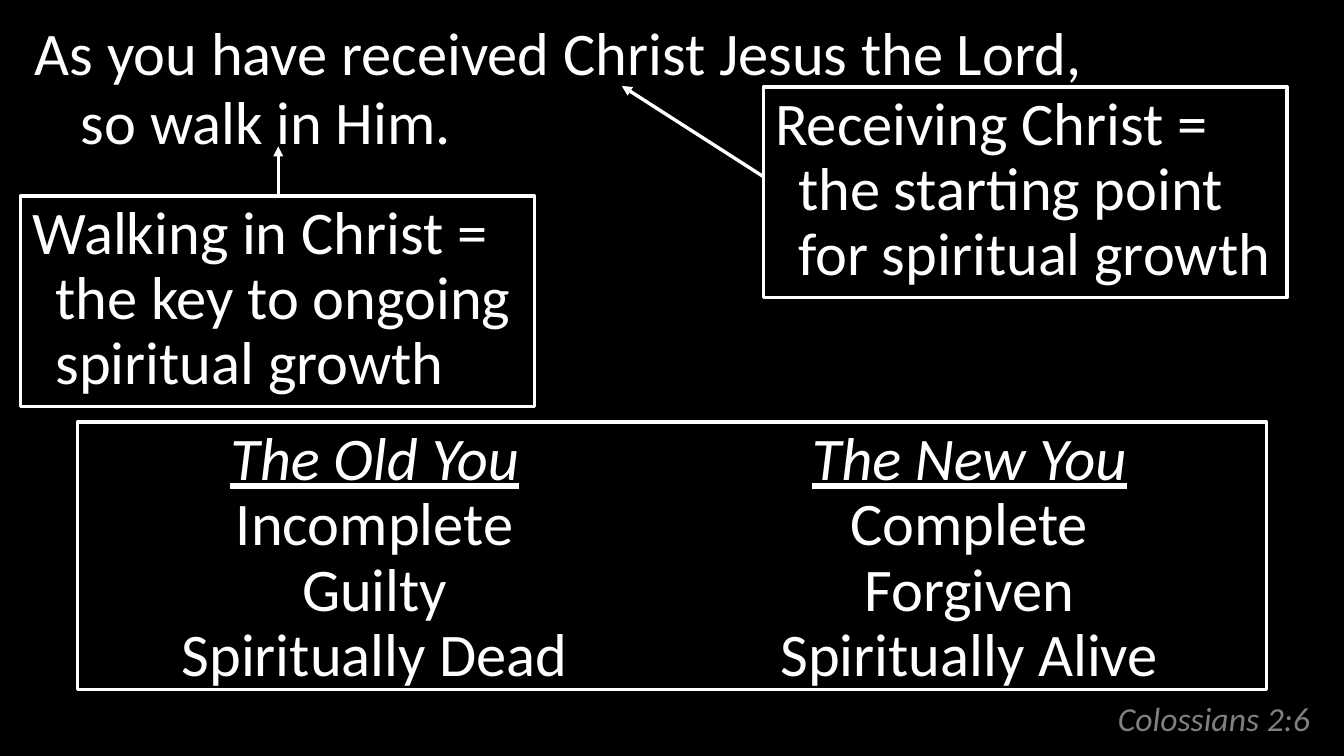
import dataclasses

import pptx
import pptx.dml.color
import pptx.enum.shapes
import pptx.enum.text
import pptx.oxml
import pptx.oxml.ns
import pptx.util

Inches = pptx.util.Inches
Pt = pptx.util.Pt
Align = pptx.enum.text.PP_ALIGN
Anchor = pptx.enum.text.MSO_ANCHOR


@dataclasses.dataclass(frozen=True)
class Theme:
    """Colours, type and line sizes of the deck."""
    back: str = "000000"
    ink: str = "FFFFFF"
    dim: str = "808080"
    font: str = "Calibri"
    body: int = 36
    small: int = 20
    line: int = 2


THEME = Theme()


def color(name):
    """Turn a hex string into a colour."""
    return pptx.dml.color.RGBColor.from_string(name)


def format_text(para, size=THEME.body, ink=THEME.ink, space=0.9,
                align=Align.LEFT, hang=0, italic=False, line=False):
    """Format a paragraph and its runs."""
    para.alignment = align
    para.line_spacing = space
    props = para._p.get_or_add_pPr()
    props.set("marL", str(Inches(hang)))
    props.set("indent", str(-Inches(hang)))
    for run in para.runs:
        font = run.font
        font.name = THEME.font
        font.size = Pt(size)
        font.color.rgb = color(ink)
        font.italic = italic
        font.underline = line


def add_box(slide, box):
    """Add a black box with a white outline."""
    frame = slide.shapes.add_shape(
        pptx.enum.shapes.MSO_SHAPE.RECTANGLE, *map(Inches, box))
    frame.shadow.inherit = False
    frame.fill.solid()
    frame.fill.fore_color.rgb = color(THEME.back)
    frame.line.color.rgb = color(THEME.ink)
    frame.line.width = Pt(THEME.line)
    return frame


def add_text(slide, box, text):
    """Add a wrapping text box and return its text frame."""
    frame = slide.shapes.add_textbox(*map(Inches, box)).text_frame
    frame.word_wrap = True
    frame.text = text
    return frame


def add_arrow(slide, start, end):
    """Add a white arrow that points at end."""
    arrow = slide.shapes.add_connector(
        pptx.enum.shapes.MSO_CONNECTOR.STRAIGHT, *map(Inches, start + end))
    arrow.line.color.rgb = color(THEME.ink)
    arrow.line.width = Pt(THEME.line)
    tail = pptx.oxml.parse_xml(
        f'<a:tailEnd {pptx.oxml.ns.nsdecls("a")} type="triangle"/>')
    arrow.line._get_or_add_ln().append(tail)
    flat = pptx.oxml.parse_xml(f'<a:effectLst {pptx.oxml.ns.nsdecls("a")}/>')
    arrow._element.spPr.append(flat)


def add_title(slide, box, text):
    """Place the verse reference in the title placeholder."""
    title = slide.shapes.title
    title.left, title.top, title.width, title.height = map(Inches, box)
    frame = title.text_frame
    frame.text = text
    frame.word_wrap = True
    frame.auto_size = pptx.enum.text.MSO_AUTO_SIZE.NONE
    frame.vertical_anchor = Anchor.BOTTOM
    format_text(frame.paragraphs[0], THEME.small, THEME.dim, 0.8,
                Align.RIGHT, italic=True)


def add_verse(slide, box, text):
    """Add the verse with its second line indented."""
    frame = add_text(slide, box, text)
    format_text(frame.paragraphs[0], space=0.95, hang=0.38)


def add_note(slide, box, text, start, end):
    """Add a boxed note with an arrow, both offset from the box corner."""
    left, top = box[:2]
    frame = add_box(slide, box).text_frame
    frame.word_wrap = True
    frame.vertical_anchor = Anchor.TOP
    frame.text = text
    format_text(frame.paragraphs[0], hang=0.19)
    add_arrow(slide, (left + start[0], top + start[1]),
              (left + end[0], top + end[1]))


def add_contrast(slide, box, lists):
    """Add a box with equal columns, each headed by its first entry."""
    add_box(slide, box)
    left, top, width, height = box
    step = width / len(lists)
    for col, words in enumerate(lists):
        frame = add_text(slide, (left + col * step, top, step, height),
                         "\n".join(words))
        for row, para in enumerate(frame.paragraphs):
            head = row == 0
            format_text(para, align=Align.CENTER, hang=0.19,
                        italic=head, line=head)


def build_slide(deck):
    """Build the verse slide."""
    slide = deck.slides.add_slide(deck.slide_layouts[5])
    slide.background.fill.solid()
    slide.background.fill.fore_color.rgb = color(THEME.back)
    add_contrast(slide, (0.64, 3.49, 9.83, 2.21), [
        ("The Old You", "Incomplete", "Guilty", "Spiritually Dead"),
        ("The New You", "Complete", "Forgiven", "Spiritually Alive"),
    ])
    add_title(slide, (7.06, 5.56, 3.87, 0.59), "Colossians 2:6")
    add_verse(slide, (0.19, 0.12, 10.74, 1.3),
              "As you have received Christ Jesus the Lord,\vso walk in Him.")
    add_note(slide, (6.31, 0.72, 4.33, 1.74),
             "Receiving Christ = the starting point for spiritual growth",
             (0, 0.74), (-1.17, -0.01))
    add_note(slide, (0.17, 1.62, 4.25, 1.74),
             "Walking in Christ = the key to ongoing spiritual growth",
             (2.13, 0), (2.13, -0.41))


def main():
    """Create and save the deck."""
    deck = pptx.Presentation()
    deck.slide_width = Inches(11.11)
    deck.slide_height = Inches(6.25)
    build_slide(deck)
    deck.save("out.pptx")


if __name__ == "__main__":
    main()
